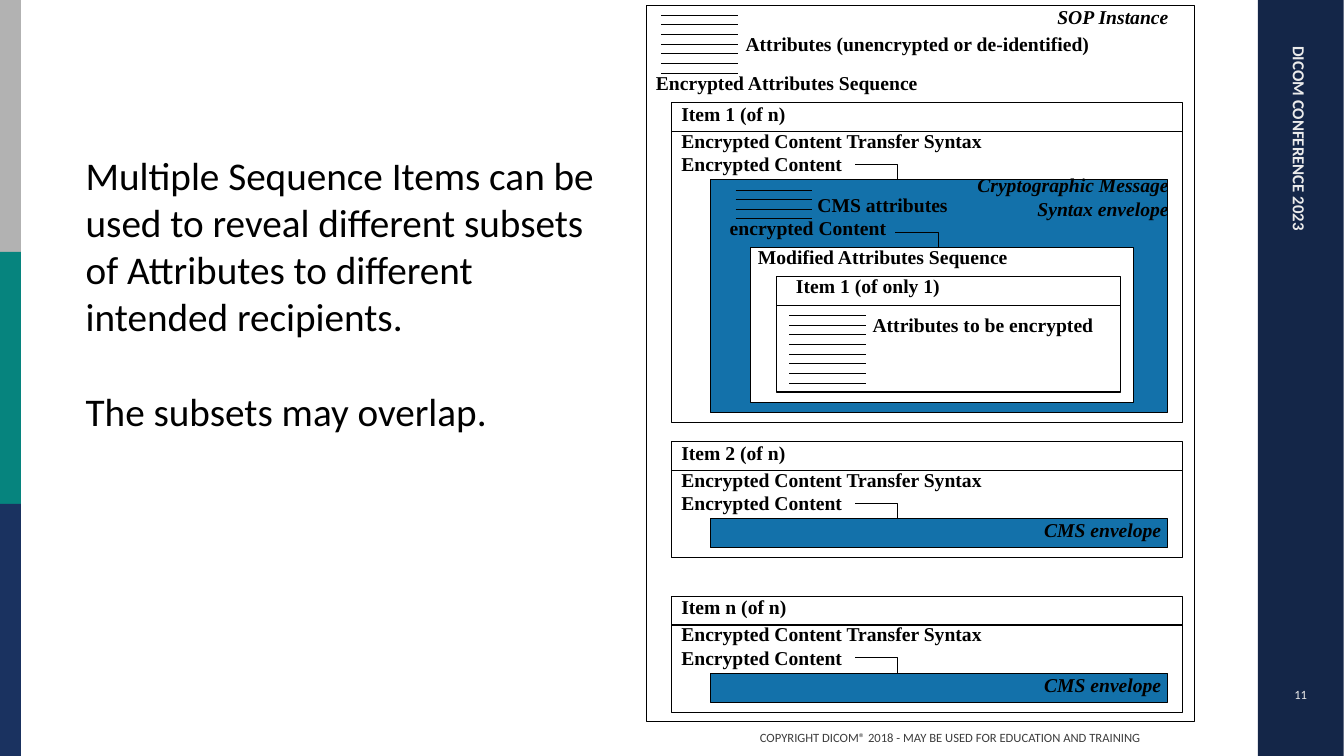
from lxml import etree
from pptx import Presentation
from pptx.dml.color import RGBColor
from pptx.enum import shapes, text
from pptx.oxml.ns import qn
from pptx.util import Cm, Pt

# Content; all lengths in cm
SANS, SERIF = "Calibri", "Times New Roman"
BLACK, WHITE, BLUE, PALE = "000000", "FFFFFF", "1371AA", "EBEBEB"
LEFT, CENTER, RIGHT = text.PP_ALIGN.LEFT, text.PP_ALIGN.CENTER, text.PP_ALIGN.RIGHT

side_panel = (31.7, 0, 2.16, 19.05, "142648")
stripe_colors = ["B2B2B2", "06847E", "1A3260"]
conference = "DICOM CONFERENCE 2023"
copyright_line = "COPYRIGHT DICOM® 2018 - MAY BE USED FOR EDUCATION AND TRAINING"
page_number = "11"
message = [
    "Multiple Sequence Items can be used to reveal different subsets of "
    "Attributes to different intended recipients.",
    "The subsets may overlap.",
]
sop_instance = (16.29, 0.15, 13.82, 18.03)
item_syntax = ["Encrypted Content Transfer Syntax", "Encrypted Content"]

# title, top, body height, envelope height, envelope label
items = [
    ("Item 1 (of n)", 2.59, 7.32, 5.87, None),
    ("Item 2 (of n)", 11.13, 2.2, 0.74, "CMS envelope"),
    ("Item n (of n)", 15.02, 2.2, 0.74, "CMS envelope"),
]
item_left, item_width, header_height = 16.92, 12.87, 0.73
envelope_left, envelope_width = 17.9, 11.53
modified_sequence = (18.92, 6.24, 9.64, 3.91)
only_item = (19.56, 6.97, 8.67, 2.18)

# left, first line, last line, number of lines
attribute_stacks = [
    (16.67, 0.38, 1.85, 7),
    (18.54, 4.8, 5.51, 4),
    (19.89, 7.95, 9.66, 8),
]
stack_width = 1.93

# lines, left, top, width
labels = [
    (["Attributes (unencrypted or de-identified)"], 18.54, 0.69, 9.22),
    (["Encrypted Attributes Sequence"], 16.28, 1.65, 7.16),
    (["CMS attributes"], 20.35, 4.73, 3.81),
    (["encrypted Content"], 18.14, 5.31, 4.6),
    (["Modified Attributes Sequence"], 18.85, 6.05, 6.86),
    (["Item 1 (of only 1)"], 19.81, 6.78, 4.17),
    (["Attributes to be encrypted"], 21.74, 7.75, 6.12),
]
italic_labels = [
    (["SOP Instance"], 26.37, 0, 3.33),
    (["Cryptographic Message", "Syntax envelope"], 24.33, 4.24, 5.38),
]

deck = Presentation()
deck.slide_width, deck.slide_height = Cm(33.87), Cm(19.05)
slide = deck.slides.add_slide(deck.slide_layouts[6])


def color(value):
    return RGBColor.from_string(value)


def outline(line):
    line.color.rgb = color(BLACK)
    line.width = Pt(0.75)


def box(left, top, width, height, fill=None, border=True):
    rect = slide.shapes.add_shape(
        shapes.MSO_SHAPE.RECTANGLE, Cm(left), Cm(top), Cm(width), Cm(height))
    rect.shadow.inherit = False
    if fill:
        rect.fill.solid()
        rect.fill.fore_color.rgb = color(fill)
    else:
        rect.fill.background()
    if border:
        outline(rect.line)
    else:
        rect.line.fill.background()


def write(lines, left, top, width, height, size, font, ink, align=LEFT,
          bold=False, italic=False, wrap=True, middle=False, gap=0):
    area = slide.shapes.add_textbox(Cm(left), Cm(top), Cm(width), Cm(height))
    frame = area.text_frame
    frame.word_wrap = wrap
    if middle:
        frame.vertical_anchor = text.MSO_ANCHOR.MIDDLE
    else:
        frame.auto_size = text.MSO_AUTO_SIZE.SHAPE_TO_FIT_TEXT
    for index, words in enumerate(lines):
        paragraph = frame.add_paragraph() if index else frame.paragraphs[0]
        paragraph.text = words
        paragraph.alignment = align
        if index and gap:
            paragraph.space_before = Pt(gap)
        style = paragraph.font
        style.name, style.size = font, Pt(size)
        style.bold, style.italic = bold, italic
        style.color.rgb = color(ink)
    return area


def label(lines, left, top, width, italic=False):
    write(lines, left, top, width, 0.28 + 0.585 * len(lines), 14, SERIF, BLACK,
          RIGHT if italic else LEFT, bold=True, italic=italic, wrap=False)


def attribute_lines(left, first, last, count):
    for row in range(count):
        y = Cm(first + (last - first) * row / (count - 1))
        rule = slide.shapes.add_connector(
            shapes.MSO_CONNECTOR.STRAIGHT, Cm(left), y, Cm(left + stack_width), y)
        outline(rule.line)
        etree.SubElement(rule._element.spPr, qn("a:effectLst"))


def elbow(left, top):
    right, bottom = Cm(left + 1.08), Cm(top + 0.39)
    builder = slide.shapes.build_freeform(Cm(left), Cm(top))
    builder.add_line_segments([(right, Cm(top)), (right, bottom)], close=False)
    bend = builder.convert_to_shape()
    bend.shadow.inherit = False
    bend.fill.background()
    outline(bend.line)


def headed_box(left, top, width, body_height):
    box(left, top, width, header_height)
    box(left, top + header_height, width, body_height)


# Slide frame
box(*side_panel, border=False)
for row, stripe in enumerate(stripe_colors):
    box(0, 6.35 * row, 0.53, 6.35, stripe, border=False)
write([conference], 26.97, 6.32, 11.56, 0.76, 12, SANS, PALE, bold=True).rotation = 90
write([copyright_line], 18.9, 18.08, 14.81, 1.02, 9, SANS, "3D3D3D", middle=True)
write([page_number], 31.7, 16.99, 2.16, 1.02, 9, SANS, PALE, CENTER, middle=True)
write(message, 1.91, 3.68, 13.54, 7.44, 28, SANS, BLACK, gap=34)

# Sequence items with their envelopes
box(*sop_instance)
for title, top, body_height, envelope_height, envelope_label in items:
    box(envelope_left, top + 1.94, envelope_width, envelope_height, BLUE)
    headed_box(item_left, top, item_width, body_height)
    label([title], item_left, top - 0.15, 3.4)
    label(item_syntax, item_left, top + 0.53, 8.15)
    elbow(21.55, top + 1.55)
    if envelope_label:
        label([envelope_label], 26.01, top + 1.8, 3.51, italic=True)

# Inside the first envelope
box(*modified_sequence, WHITE)
headed_box(*only_item)
elbow(22.56, 5.87)

# Attribute lines and labels
for stack in attribute_stacks:
    attribute_lines(*stack)
for entry in labels:
    label(*entry)
for entry in italic_labels:
    label(*entry, italic=True)

deck.save("out.pptx")
